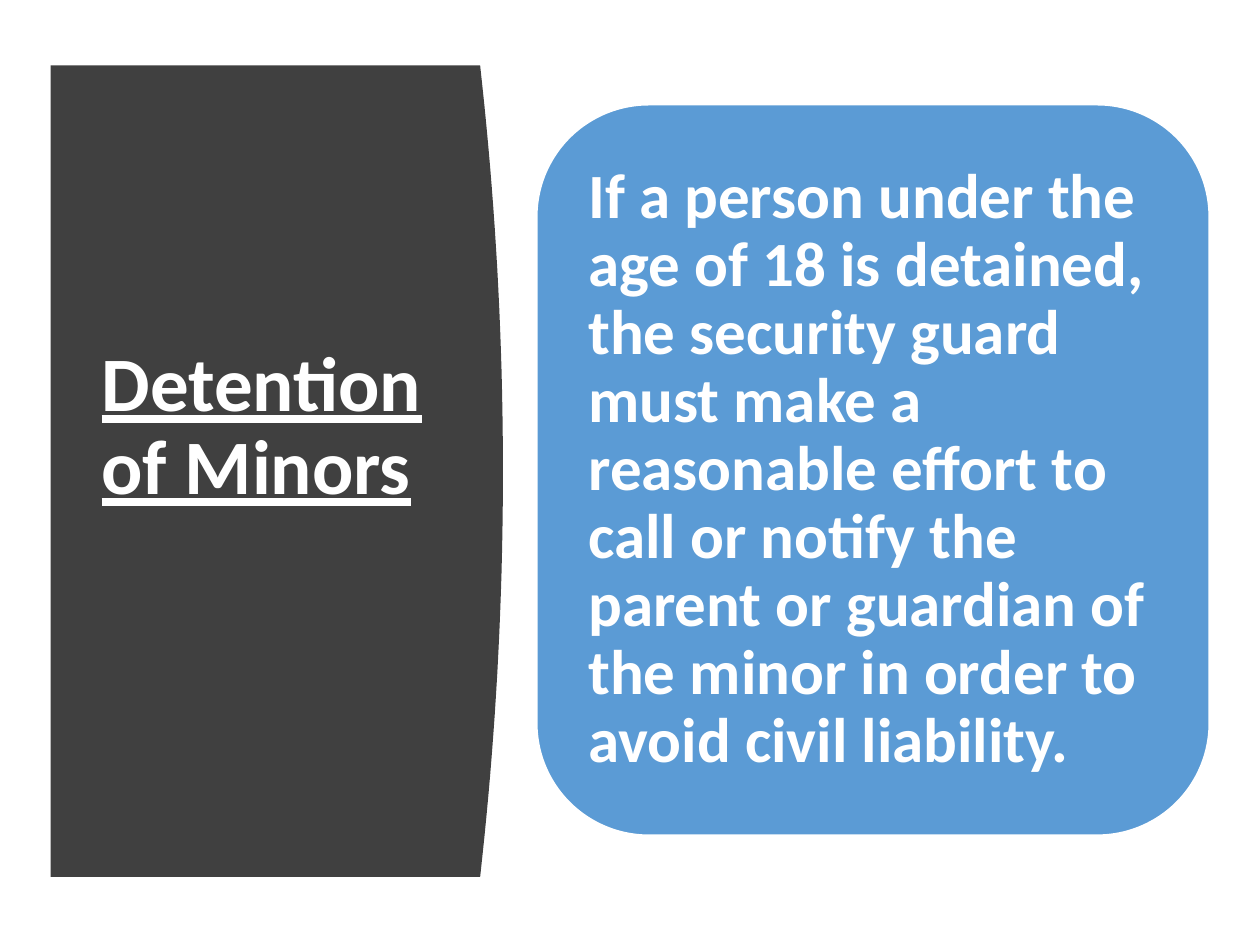
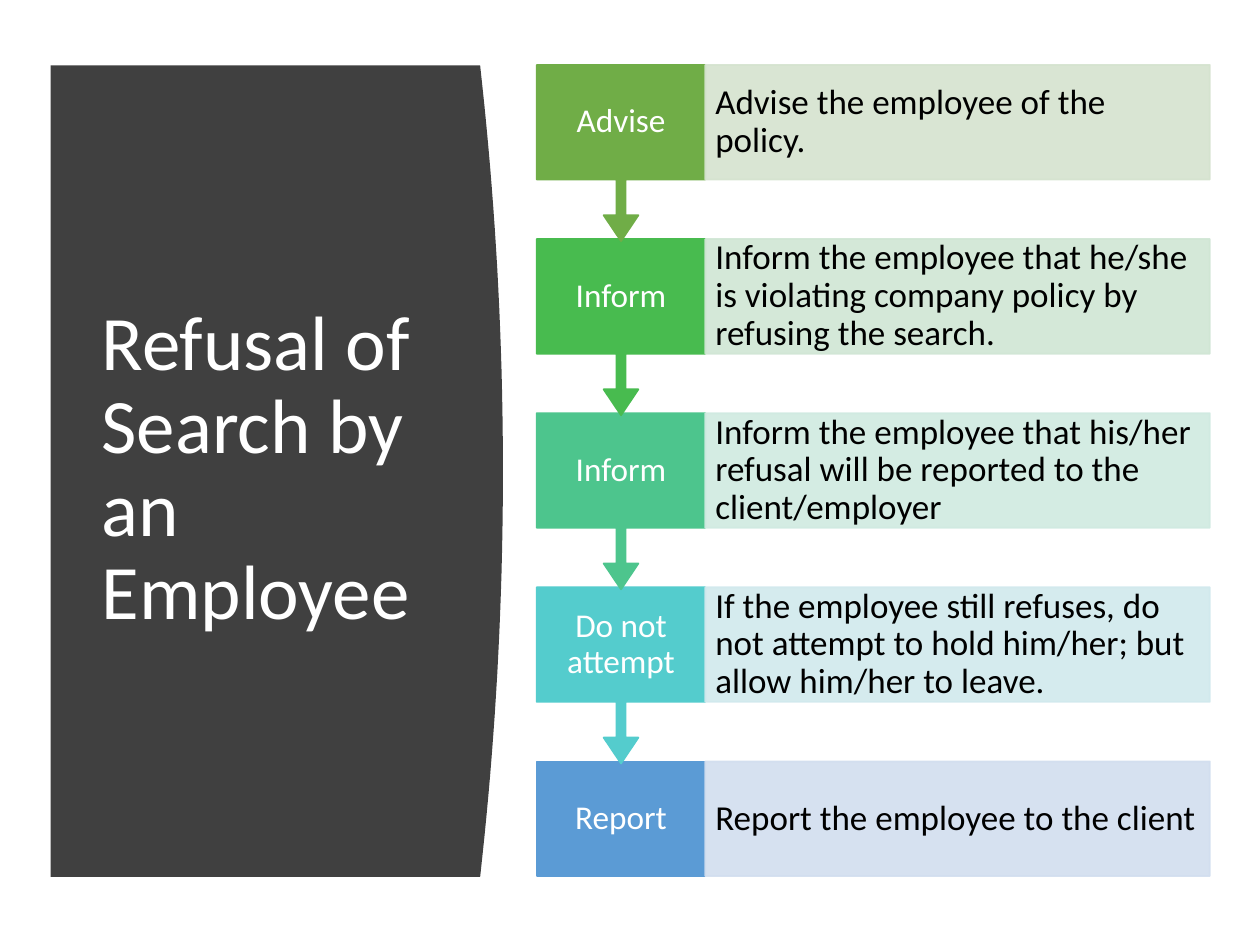
from lxml import etree
from pptx import Presentation
from pptx.dml.color import RGBColor
from pptx.enum.shapes import MSO_SHAPE as Preset
from pptx.enum.text import MSO_ANCHOR as Anchor, PP_ALIGN as Align
from pptx.oxml.ns import qn
from pptx.util import Cm, Pt

WHITE = RGBColor(0xFF, 0xFF, 0xFF)
BLACK = RGBColor(0x00, 0x00, 0x00)
CHARCOAL = RGBColor(0x40, 0x40, 0x40)
BLUE = RGBColor(0x5B, 0x9B, 0xD5)
PALE_BLUE = RGBColor(0xD2, 0xDE, 0xEF)
TURQUOISE = RGBColor(0x54, 0xCC, 0xCD)
PALE_TURQUOISE = RGBColor(0xD1, 0xE9, 0xED)
MINT = RGBColor(0x4D, 0xC5, 0x8D)
PALE_MINT = RGBColor(0xD0, 0xEA, 0xE1)
GREEN = RGBColor(0x48, 0xBB, 0x4F)
PALE_GREEN = RGBColor(0xD0, 0xE6, 0xD4)
OLIVE = RGBColor(0x70, 0xAD, 0x47)
PALE_OLIVE = RGBColor(0xD5, 0xE3, 0xCF)
FONT = "Calibri"


def write_text(shape, text, size, color, insets, align=Align.LEFT, bold=False):
    frame = shape.text_frame
    frame.word_wrap = True
    frame.vertical_anchor = Anchor.MIDDLE
    side, top, bottom = insets
    frame.margin_left = frame.margin_right = Cm(side)
    frame.margin_top, frame.margin_bottom = Cm(top), Cm(bottom)
    paragraph = frame.paragraphs[0]
    paragraph.text = text
    paragraph.alignment = align
    paragraph.line_spacing = 0.9
    paragraph.font.name = FONT
    paragraph.font.size = Pt(size)
    paragraph.font.bold = bold
    paragraph.font.color.rgb = color
    return paragraph


def draw_outline(slide, points, color):
    corners = [(Cm(x), Cm(y)) for x, y in points]
    builder = slide.shapes.build_freeform(*corners[0])
    builder.add_line_segments(corners[1:], close=True)
    shape = builder.convert_to_shape()
    shape.shadow.inherit = False
    shape.fill.solid()
    shape.fill.fore_color.rgb = color
    shape.line.color.rgb = color
    shape.line.width = Pt(1)
    return shape


presentation = Presentation()
presentation.slide_width = Cm(25.4)
presentation.slide_height = Cm(19.05)

PANEL_LEFT, PANEL_TOP, PANEL_HEIGHT = 1.02, 1.32, 16.36
PANEL_RIGHT, BULGE, CURVE_STEPS = 9.68, 0.46, 40
panel_points = [(PANEL_LEFT, PANEL_TOP)]
for step in range(CURVE_STEPS + 1):
    share = step / CURVE_STEPS
    panel_points.append((PANEL_RIGHT + BULGE * 4 * share * (1 - share),
                         PANEL_TOP + PANEL_HEIGHT * share))
panel_points.append((PANEL_LEFT, PANEL_TOP + PANEL_HEIGHT))

titles = [
    ("Detention of Minors", True, 1.83),
    ("Refusal of Search by an Employee", False, 0.13),
]
slides = []
for title, emphasized, bottom_inset in titles:
    slide = presentation.slides.add_slide(presentation.slide_layouts[6])
    panel = draw_outline(slide, panel_points, CHARCOAL)
    panel.line.fill.background()
    title_box = slide.shapes.add_textbox(Cm(1.8), Cm(2.82), Cm(7.11), Cm(13.31))
    paragraph = write_text(title_box, title, 44, WHITE, (0.25, 0.13, bottom_inset), bold=emphasized)
    paragraph.font.underline = emphasized
    slides.append(slide)
minors_slide, refusal_slide = slides

rule_card = minors_slide.shapes.add_shape(
    Preset.ROUNDED_RECTANGLE, Cm(10.82), Cm(2.11), Cm(13.56), Cm(14.73))
rule_card.shadow.inherit = False
rule_card.fill.solid()
rule_card.fill.fore_color.rgb = BLUE
rule_card.line.color.rgb = WHITE
rule_card.line.width = Pt(1)
write_text(
    rule_card,
    "If a person under the age of 18 is detained, the security guard must make a "
    "reasonable effort to call or notify the parent or guardian of the minor in order "
    "to avoid civil liability.",
    36, WHITE, (0.38, 0.38, 0.38), bold=True)

steps = [
    ("Advise", "Advise the employee of the policy.", OLIVE, PALE_OLIVE),
    ("Inform", "Inform the employee that he/she is violating company policy by refusing the search.",
     GREEN, PALE_GREEN),
    ("Inform", "Inform the employee that his/her refusal will be reported to the client/employer",
     MINT, PALE_MINT),
    ("Do not attempt", "If the employee still refuses, do not attempt to hold him/her; "
     "but allow him/her to leave.", TURQUOISE, PALE_TURQUOISE),
    ("Report", "Report the employee to the client", BLUE, PALE_BLUE),
]
STEP_LEFT, STEP_MIDDLE, STEP_RIGHT, DETAIL_RIGHT = 10.82, 12.52, 14.22, 24.39
STEP_TOP, STEP_HEIGHT, STEP_PITCH = 1.31, 2.31, 3.51
STEM_HALF, HEAD_HALF, STEM_LENGTH, ARROW_LENGTH = 0.09, 0.35, 0.72, 1.24

for index, (action, detail, color, pale_color) in reversed(list(enumerate(steps))):
    top = STEP_TOP + index * STEP_PITCH
    bottom = top + STEP_HEIGHT
    step_points = [(STEP_LEFT, bottom), (STEP_LEFT, top), (STEP_RIGHT, top), (STEP_RIGHT, bottom)]
    bottom_inset = 0.38
    if index < len(steps) - 1:
        neck = bottom + STEM_LENGTH
        step_points += [
            (STEP_MIDDLE + STEM_HALF, bottom),
            (STEP_MIDDLE + STEM_HALF, neck),
            (STEP_MIDDLE + HEAD_HALF, neck),
            (STEP_MIDDLE, bottom + ARROW_LENGTH),
            (STEP_MIDDLE - HEAD_HALF, neck),
            (STEP_MIDDLE - STEM_HALF, neck),
            (STEP_MIDDLE - STEM_HALF, bottom),
        ]
        bottom_inset += ARROW_LENGTH
    step_box = draw_outline(refusal_slide, step_points, color)
    write_text(step_box, action, 19, WHITE, (0.23, 0.38, bottom_inset), Align.CENTER)

    detail_points = [(STEP_RIGHT, top), (DETAIL_RIGHT, top), (DETAIL_RIGHT, bottom), (STEP_RIGHT, bottom)]
    detail_box = draw_outline(refusal_slide, detail_points, pale_color)
    for color_element in detail_box._element.spPr.iter(qn("a:srgbClr")):
        etree.SubElement(color_element, qn("a:alpha"), val="90000")
    write_text(detail_box, detail, 20, BLACK, (0.2, 0.53, 0.53))

presentation.save("out.pptx")
